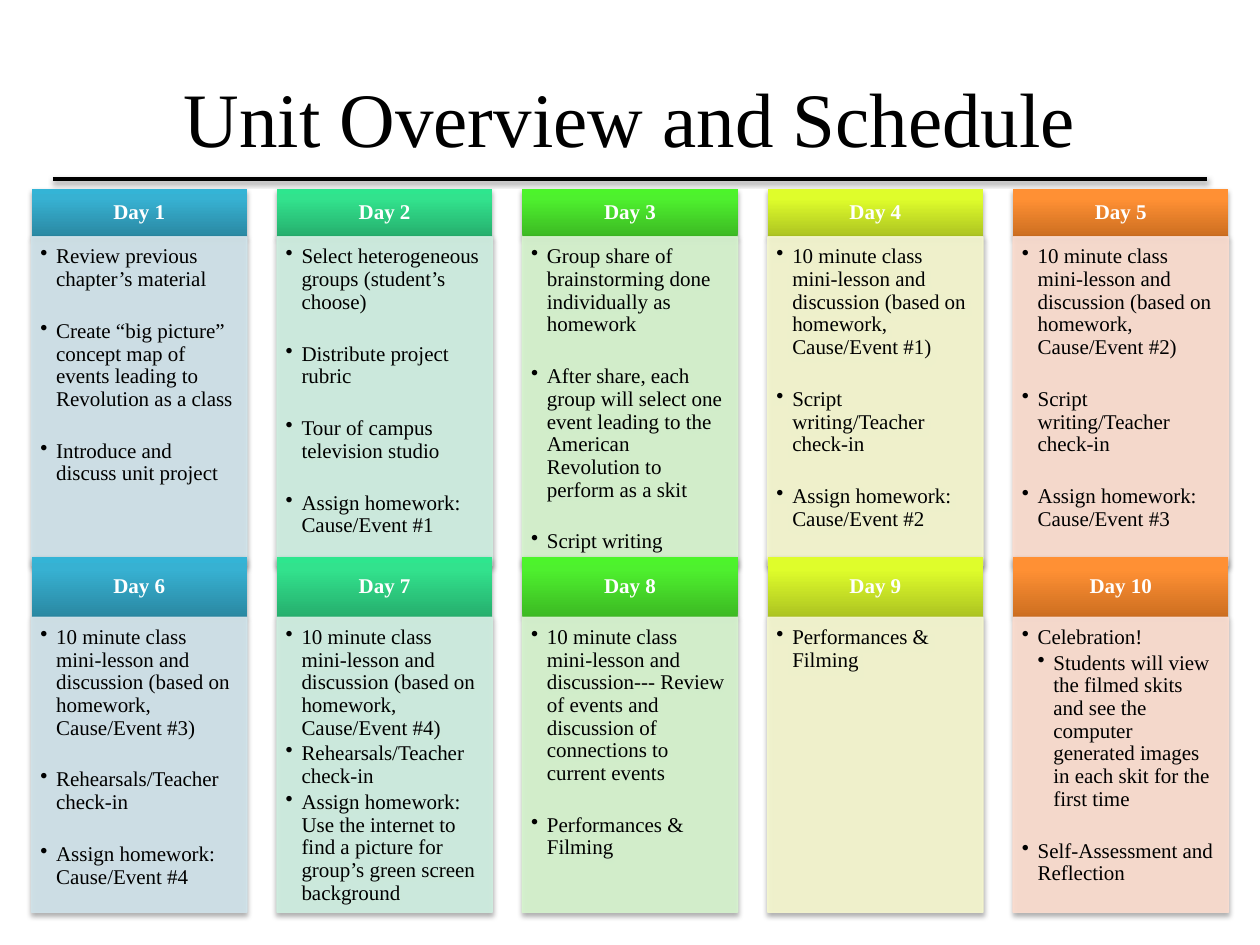
from pptx import Presentation
from pptx.dml.color import RGBColor
from pptx.enum.shapes import MSO_CONNECTOR, MSO_SHAPE
from pptx.enum.text import MSO_ANCHOR, PP_ALIGN
from pptx.oxml import parse_xml
from pptx.oxml.ns import nsdecls, qn
from pptx.oxml.xmlchemy import OxmlElement
from pptx.util import Inches, Pt

FONT = "Times New Roman"
COLORS = {"text": "000000", "header_text": "FFFFFF", "rule": "000000", "shadow": "000000"}
PALETTES = [
    {"dark": "2A88A2", "light": "37B1D2", "top": "34B4D6", "body": "D0E3EA"},
    {"dark": "26AE6D", "light": "32E28D", "top": "2EE68E", "body": "CFEFE1"},
    {"dark": "3CB923", "light": "4EF02E", "top": "4CF52A", "body": "D6F4CE"},
    {"dark": "ACC321", "light": "DFFD2B", "top": "E1FF2B", "body": "F6F8CF"},
    {"dark": "CC6E20", "light": "FF9034", "top": "FF9136", "body": "FCDDCF"},
]
CARD_WIDTH = 1.71
TIGHT_SPACE, GROUP_SPACE = 1.8, 16.7

LESSON = "10 minute class mini-lesson and discussion (based on homework, Cause/Event #{})"
HOMEWORK = "Assign homework: Cause/Event #{}"
WRITING = "Script writing/Teacher check-in"
FILMING = "Performances & Filming"
VIEWING = ("Students will view the filmed skits and see the computer generated images "
           "in each skit for the first time")
SUBPOINTS = {VIEWING}

WEEK_ONE = [
    [["Review previous chapter’s material"],
     ["Create “big picture” concept map of events leading to Revolution as a class"],
     ["Introduce and discuss unit project"]],
    [["Select heterogeneous groups (student’s choose)"],
     ["Distribute project rubric"],
     ["Tour of campus television studio"],
     [HOMEWORK.format(1)]],
    [["Group share of brainstorming done individually as homework"],
     ["After share, each group will select one event leading to the American "
      "Revolution to perform as a skit"],
     ["Script writing"]],
    [[LESSON.format(1)], [WRITING], [HOMEWORK.format(2)]],
    [[LESSON.format(2)], [WRITING], [HOMEWORK.format(3)]],
]
WEEK_TWO = [
    [[LESSON.format(3)], ["Rehearsals/Teacher check-in"], [HOMEWORK.format(4)]],
    [[LESSON.format(4),
      "Rehearsals/Teacher check-in",
      "Assign homework: Use the internet to find a picture for group’s green screen background"]],
    [["10 minute class mini-lesson and discussion--- Review of events and discussion "
      "of connections to current events"],
     [FILMING]],
    [[FILMING]],
    [["Celebration!", VIEWING], ["Self-Assessment and Reflection"]],
]


def add_shadow(properties, alpha, distance):
    effects = properties.find(qn("a:effectLst"))
    if effects is None:
        effects = OxmlElement("a:effectLst")
        properties.append(effects)
    effects.append(parse_xml(
        f'<a:outerShdw {nsdecls("a")} blurRad="{Pt(3.1)}" dist="{Pt(distance)}" '
        f'dir="5400000" rotWithShape="0"><a:srgbClr val="{COLORS["shadow"]}">'
        f'<a:alpha val="{alpha * 1000}"/></a:srgbClr></a:outerShdw>'))


def set_gradient(shape, palette):
    shape.fill.gradient()
    stops = [(0, "dark"), (80, "light"), (100, "top")]
    stop_xml = "".join(
        f'<a:gs pos="{position * 1000}"><a:srgbClr val="{palette[name]}"/></a:gs>'
        for position, name in stops)
    properties = shape.element.spPr
    properties.replace(properties.find(qn("a:gradFill")), parse_xml(
        f'<a:gradFill {nsdecls("a")} rotWithShape="1"><a:gsLst>{stop_xml}</a:gsLst>'
        '<a:lin ang="16200000" scaled="0"/></a:gradFill>'))


def set_bullet(paragraph, level):
    properties = paragraph._p.get_or_add_pPr()
    properties.set("marL", str(Inches(0.125 * (level + 1))))
    properties.set("indent", str(-Inches(0.125)))
    bullet = OxmlElement("a:buChar")
    bullet.set("char", "•")
    properties.append(bullet)


def format_text(paragraph, size, color, bold=False):
    paragraph.font.name = FONT
    for run in paragraph.runs:
        run.font.name = FONT
        run.font.size = Pt(size)
        run.font.bold = bold
        run.font.color.rgb = RGBColor.from_string(COLORS[color])


def add_block(slide, left, top, width, height, insets, anchor):
    shape = slide.shapes.add_shape(
        MSO_SHAPE.RECTANGLE, Inches(left), Inches(top), Inches(width), Inches(height))
    shape.shadow.inherit = False
    add_shadow(shape.element.spPr, 35, 1.8)
    frame = shape.text_frame
    frame.word_wrap = True
    frame.vertical_anchor = anchor
    frame.margin_left, frame.margin_top, frame.margin_right, frame.margin_bottom = map(
        Inches, insets)
    return shape


def add_day_header(slide, left, top, width, height, label, palette):
    shape = add_block(slide, left, top, width, height,
                      (0.09, 0.05, 0.09, 0.05), MSO_ANCHOR.MIDDLE)
    set_gradient(shape, palette)
    shape.line.fill.background()
    paragraph = shape.text_frame.paragraphs[0]
    paragraph.text = label
    paragraph.alignment = PP_ALIGN.CENTER
    paragraph.line_spacing = 0.9
    format_text(paragraph, 12, "header_text", bold=True)


def add_day_body(slide, left, top, width, height, groups, palette):
    shape = add_block(slide, left, top, width, height,
                      (0.07, 0.07, 0.09, 0.1), MSO_ANCHOR.TOP)
    shape.fill.solid()
    shape.line.width = Pt(0.75)
    for color in (shape.fill.fore_color, shape.line.color):
        color.rgb = RGBColor.from_string(palette["body"])
    for color_element in shape.element.spPr.iter(qn("a:srgbClr")):
        if color_element.get("val") == palette["body"]:
            alpha = OxmlElement("a:alpha")
            alpha.set("val", "90000")
            color_element.append(alpha)

    frame = shape.text_frame
    items = [(text, text is group[-1]) for group in groups for text in group]
    for index, (text, ends_group) in enumerate(items):
        paragraph = frame.add_paragraph() if index else frame.paragraphs[0]
        paragraph.text = text
        paragraph.alignment = PP_ALIGN.LEFT
        level = int(text in SUBPOINTS)
        paragraph.level = level
        set_bullet(paragraph, level)
        paragraph.line_spacing = 0.9
        paragraph.space_after = Pt(GROUP_SPACE if ends_group else TIGHT_SPACE)
        format_text(paragraph, 12, "text")


def add_week(slide, left, top, width, header_height, body_height, first_day, days):
    pitch = (width - CARD_WIDTH) / (len(days) - 1)
    for index, (groups, palette) in enumerate(zip(days, PALETTES)):
        card_left = left + index * pitch
        add_day_header(slide, card_left, top, CARD_WIDTH, header_height,
                       f"Day {first_day + index}", palette)
        add_day_body(slide, card_left, top + header_height, CARD_WIDTH, body_height,
                     groups, palette)


def add_title(slide, left, top, width, height):
    box = slide.shapes.add_textbox(Inches(left), Inches(top), Inches(width), Inches(height))
    frame = box.text_frame
    frame.word_wrap = True
    frame.vertical_anchor = MSO_ANCHOR.MIDDLE
    paragraph = frame.paragraphs[0]
    paragraph.text = "Unit Overview and Schedule"
    paragraph.alignment = PP_ALIGN.CENTER
    format_text(paragraph, 44, "text")


def add_title_rule(slide, left, top, width):
    line = slide.shapes.add_connector(
        MSO_CONNECTOR.STRAIGHT, Inches(left), Inches(top), Inches(left + width), Inches(top))
    line.line.width = Pt(2)
    line.line.color.rgb = RGBColor.from_string(COLORS["rule"])
    add_shadow(line._element.spPr, 38, 1.6)


def main():
    presentation = Presentation()
    presentation.slide_width = Inches(10)
    presentation.slide_height = Inches(7.5)
    slide = presentation.slides.add_slide(presentation.slide_layouts[6])
    add_title(slide, 0.5, 0.3, 9, 1.25)
    add_week(slide, 0.25, 1.5, 9.5, 0.38, 2.61, 1, WEEK_ONE)
    add_week(slide, 0.25, 4.42, 9.5, 0.48, 2.34, 6, WEEK_TWO)
    add_title_rule(slide, 0.42, 1.42, 9.16)
    presentation.save("out.pptx")


if __name__ == "__main__":
    main()
